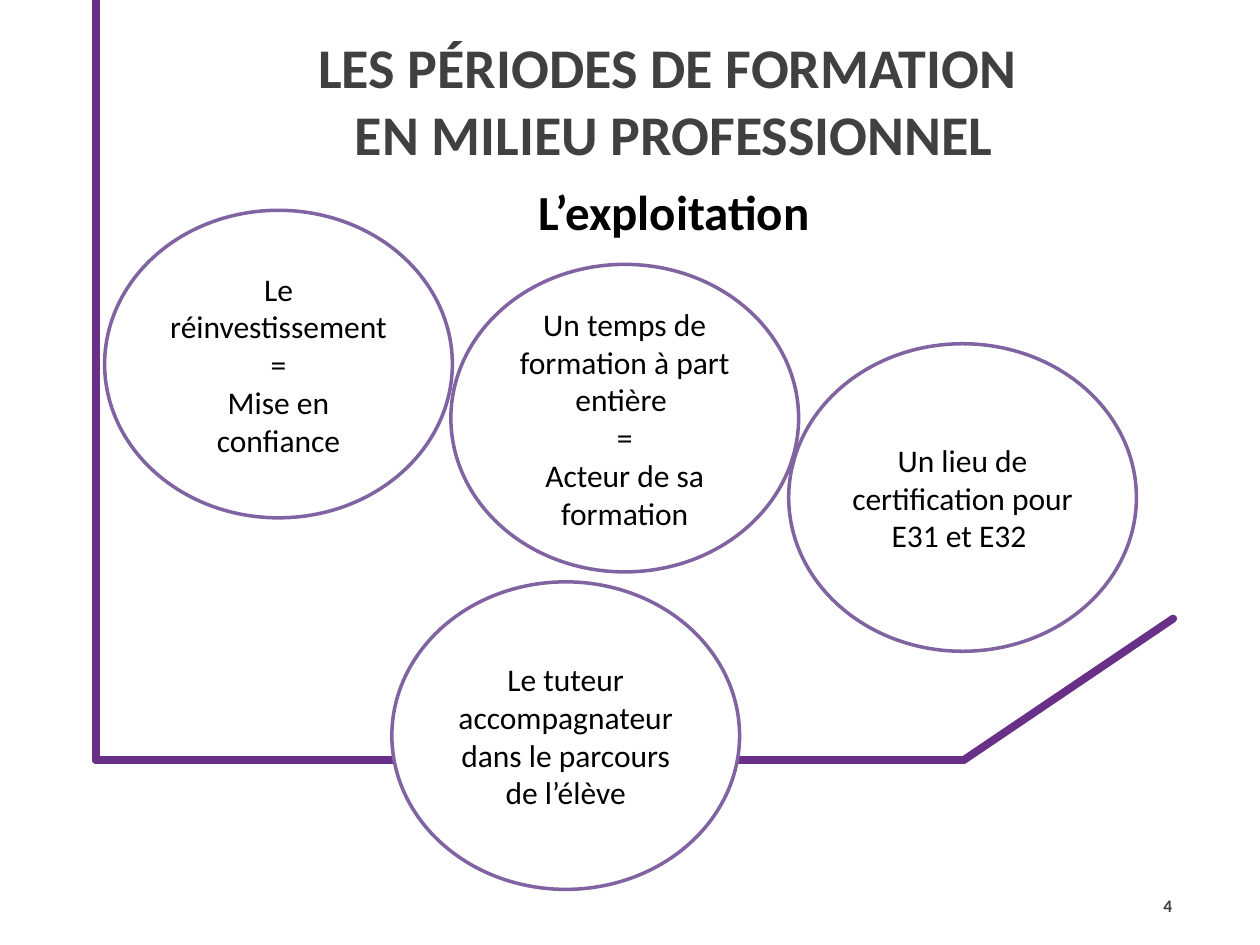
from dataclasses import dataclass

import pptx
import pptx.util
from pptx.dml.color import RGBColor
from pptx.enum.shapes import MSO_CONNECTOR, MSO_SHAPE
from pptx.enum.text import MSO_ANCHOR, MSO_AUTO_SIZE, PP_ALIGN
from pptx.oxml.ns import qn
from pptx.util import Cm, Pt


@dataclass(frozen=True)
class Theme:
    font: str = "Calibri"
    frame: str = "683086"
    outline: str = "8064A2"
    fill: str = "FFFFFF"
    heading: str = "404040"
    body: str = "000000"
    title_size: int = 32
    subtitle_size: int = 28
    body_size: int = 18
    number_size: int = 10


THEME = Theme()
BUBBLE_W, BUBBLE_H = 7.01, 6.2
FRAME_POINTS = [(1.93, 0), (1.93, 15.32), (19.43, 15.32), (23.65, 12.47)]
BUBBLES = [
    (2.11, 4.24, ["Le réinvestissement =", "Mise en confiance"]),
    (9.09, 5.33, ["Un temps de formation à part entière ", "=",
                  "Acteur de sa formation"]),
    (15.9, 6.93, ["Un lieu de certification pour E31 et E32 "]),
    (7.9, 11.73, ["Le tuteur accompagnateur dans le parcours de l’élève"]),
]


def rgb(value):
    return RGBColor.from_string(value)


def write(tf, lines, size, color=THEME.body, bold=False,
          align=PP_ALIGN.CENTER, anchor=MSO_ANCHOR.TOP):
    tf.word_wrap = True
    tf.auto_size = MSO_AUTO_SIZE.NONE
    tf.vertical_anchor = anchor
    for i, line in enumerate(lines):
        p = tf.paragraphs[0] if i == 0 else tf.add_paragraph()
        p.alignment = align
        r = p.add_run()
        r.text = line
        r.font.name = THEME.font
        r.font.size = Pt(size)
        r.font.bold = bold
        r.font.color.rgb = rgb(color)


def add_text(s, left, top, width, height, lines, size, **fmt):
    box = s.shapes.add_textbox(Cm(left), Cm(top), Cm(width), Cm(height))
    write(box.text_frame, lines, size, **fmt)


def set_title(s, left, top, width, height, lines):
    title = s.shapes.title
    title.left, title.top = Cm(left), Cm(top)
    title.width, title.height = Cm(width), Cm(height)
    write(title.text_frame, lines, THEME.title_size,
          color=THEME.heading, bold=True)


def add_line(s, start, end):
    line = s.shapes.add_connector(
        MSO_CONNECTOR.STRAIGHT, *(Cm(v) for v in (*start, *end)))
    line.line.color.rgb = rgb(THEME.frame)
    line.line.width = Pt(4.5)
    # Round ends, no shadow
    sp_pr = line._element.spPr
    sp_pr.find(qn("a:ln")).set("cap", "rnd")
    sp_pr.append(pptx.oxml.parse_xml(
        '<a:effectLst xmlns:a='
        '"http://schemas.openxmlformats.org/drawingml/2006/main"/>'))


def add_bubble(s, left, top, lines):
    sp = s.shapes.add_shape(MSO_SHAPE.FLOWCHART_CONNECTOR, Cm(left), Cm(top),
                            Cm(BUBBLE_W), Cm(BUBBLE_H))
    sp.shadow.inherit = False
    sp.fill.solid()
    sp.fill.fore_color.rgb = rgb(THEME.fill)
    sp.line.color.rgb = rgb(THEME.outline)
    sp.line.width = Pt(2)
    write(sp.text_frame, lines, THEME.body_size, anchor=MSO_ANCHOR.MIDDLE)


def main():
    prs = pptx.Presentation()
    prs.slide_width, prs.slide_height = Cm(25.4), Cm(19.05)
    s = prs.slides.add_slide(prs.slide_layouts[5])

    # Purple frame
    for start, end in zip(FRAME_POINTS, FRAME_POINTS[1:]):
        add_line(s, start, end)

    # Headings and slide number
    set_title(s, 2.49, 0.53, 22.2, 2.92,
              ["LES PÉRIODES DE FORMATION ", "EN MILIEU PROFESSIONNEL"])
    add_text(s, 2.49, 3.53, 22.2, 1.45, ["L’exploitation"],
             THEME.subtitle_size, bold=True)
    add_text(s, 22.76, 17.75, 1.12, 1.02, ["4"], THEME.number_size,
             color=THEME.heading, bold=True, align=PP_ALIGN.RIGHT,
             anchor=MSO_ANCHOR.MIDDLE)

    # Bubbles
    for left, top, lines in BUBBLES:
        add_bubble(s, left, top, lines)

    prs.save("out.pptx")


if __name__ == "__main__":
    main()
